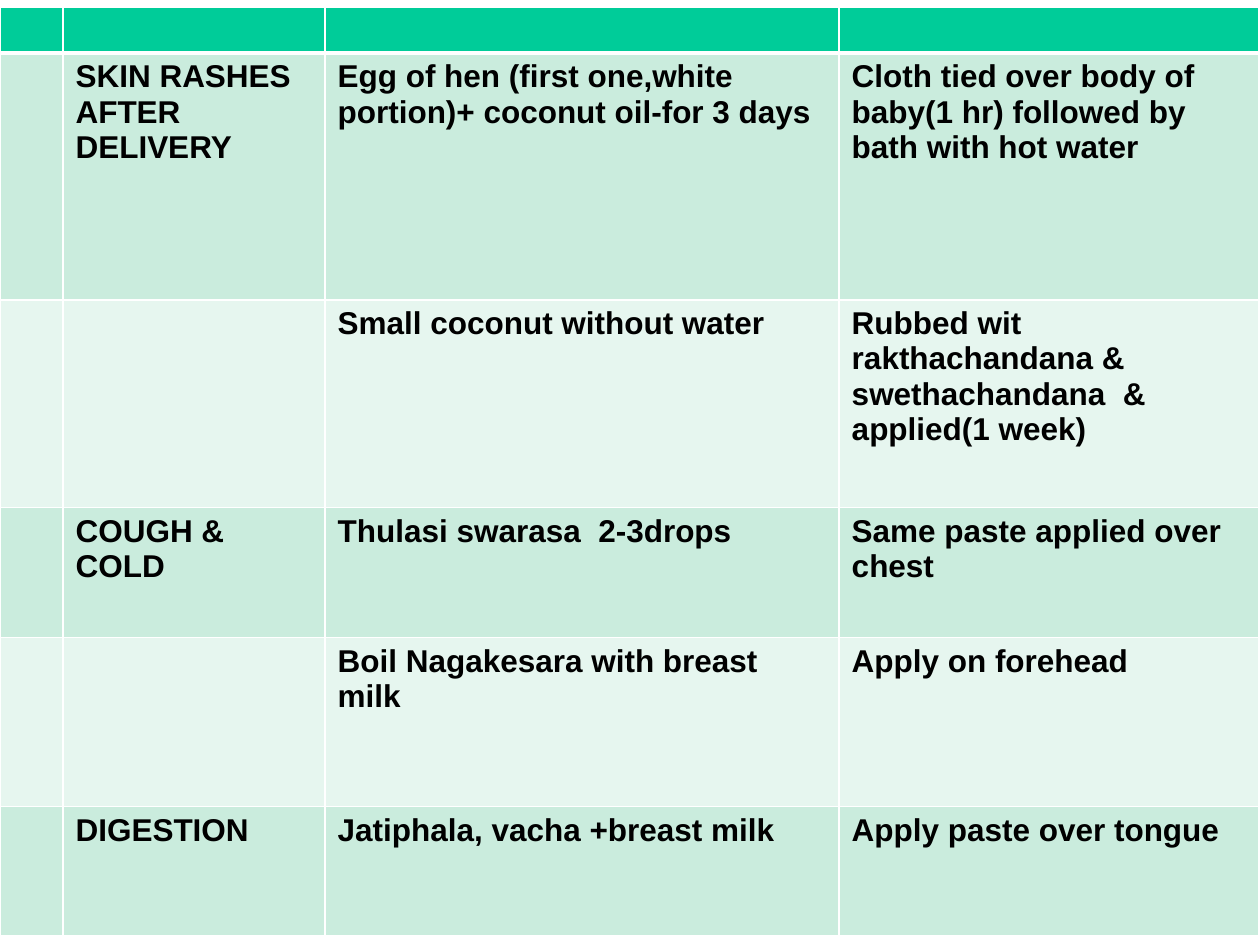
from dataclasses import dataclass

from lxml.etree import SubElement as Sub
from pptx import Presentation
from pptx.dml.color import RGBColor
from pptx.oxml.ns import qn
from pptx.util import Inches, Pt

HEAD = RGBColor(0x00, 0xCC, 0x99)
BANDS = (RGBColor(0xCA, 0xEC, 0xDD), RGBColor(0xE6, 0xF6, 0xEF))
WHITE = RGBColor(0xFF, 0xFF, 0xFF)
BLACK = RGBColor(0x00, 0x00, 0x00)
FONT = "Arial"
WIDE, HIGH = 10, 7.5
TOP = 0.06
COLS = (0.5, 2.08, 4.08, 3.33)


@dataclass
class Row:
    high: float
    ill: str = ""
    cure: str = ""
    use: str = ""


ROWS = (
    Row(0.36),
    Row(1.96, "SKIN RASHES AFTER DELIVERY",
        "Egg of hen (first one,white portion)+ coconut oil-for 3 days",
        "Cloth tied over body of baby(1 hr) followed by bath with hot water"),
    Row(1.65, "", "Small coconut without water",
        "Rubbed wit rakthachandana & swethachandana  & applied(1 week)"),
    Row(1.03, "COUGH & COLD", "Thulasi swarasa  2-3drops",
        "Same paste applied over chest"),
    Row(1.34, "", "Boil Nagakesara with breast milk", "Apply on forehead"),
    Row(1.03, "DIGESTION", "Jatiphala, vacha +breast milk",
        "Apply paste over tongue"),
)


def edge(cell, side: str, width: float) -> None:
    line = Sub(cell._tc.get_or_add_tcPr(), qn(f"a:ln{side}"), w=str(Pt(width)))
    Sub(Sub(line, qn("a:solidFill")), qn("a:srgbClr"), val=str(WHITE))


def draw_cell(cell, text: str, tint: RGBColor, top: float, base: float) -> None:
    for side, width in zip("LRTB", (1, 1, top, base)):
        edge(cell, side, width)
    cell.fill.solid()
    cell.fill.fore_color.rgb = tint
    para = cell.text_frame.paragraphs[0]
    if not text:
        Sub(para._p, qn("a:endParaRPr"), sz="1400")
        return
    para.text = text
    for run in para.runs:
        font = run.font
        font.name, font.size, font.bold = FONT, Pt(18), True
        font.color.rgb = BLACK


def draw_table(slide) -> None:
    table = slide.shapes.add_table(
        len(ROWS), len(COLS), 0, Inches(TOP), Inches(sum(COLS)),
        Inches(sum(row.high for row in ROWS))).table
    for col, width in zip(table.columns, COLS):
        col.width = Inches(width)
    for i, row in enumerate(ROWS):
        table.rows[i].height = Inches(row.high)
        tint = BANDS[(i - 1) % 2] if i else HEAD
        for j, text in enumerate(("", row.ill, row.cure, row.use)):
            draw_cell(table.cell(i, j), text, tint,
                      3 if i == 1 else 1, 3 if i == 0 else 1)


def main() -> None:
    deck = Presentation()
    deck.slide_width, deck.slide_height = Inches(WIDE), Inches(HIGH)
    draw_table(deck.slides.add_slide(deck.slide_layouts[6]))
    deck.save("out.pptx")


if __name__ == "__main__":
    main()
